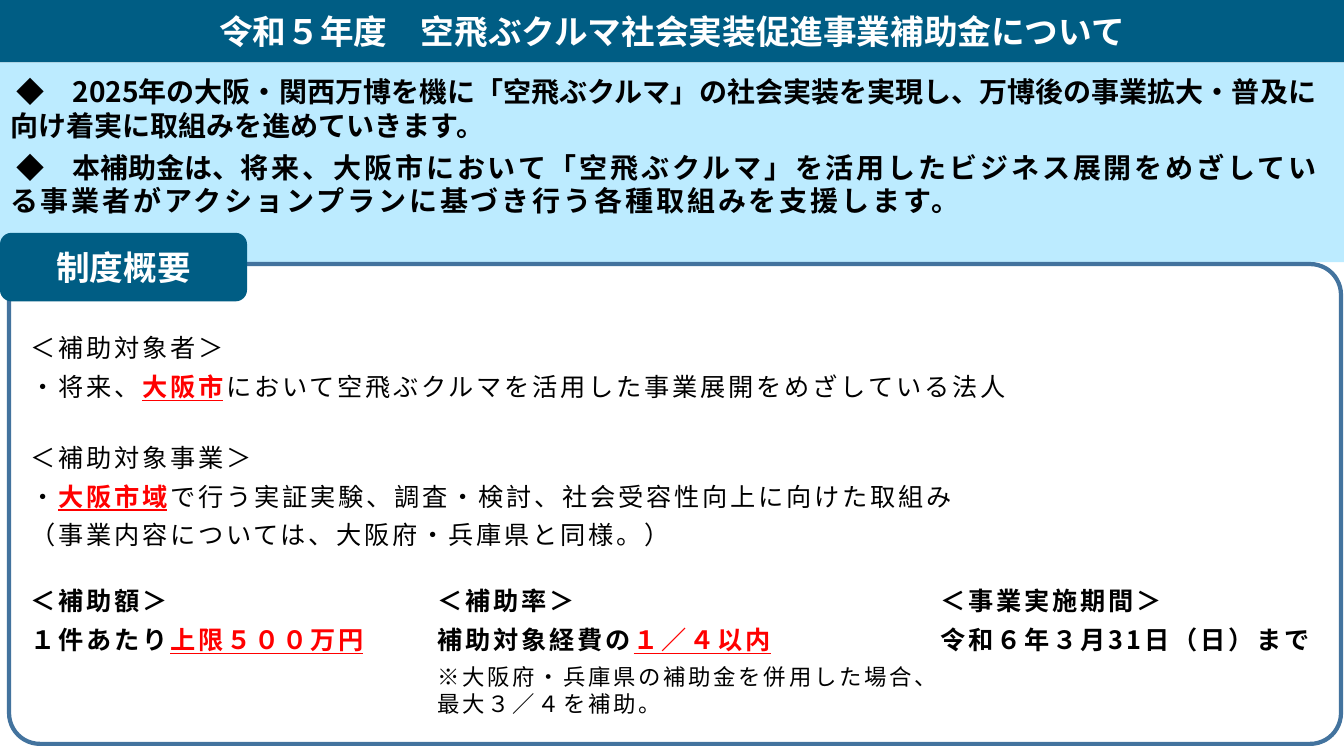
from lxml.etree import SubElement
from pptx import Presentation
from pptx.dml.color import RGBColor
from pptx.enum.shapes import MSO_SHAPE as Preset
from pptx.enum.text import MSO_ANCHOR as Anchor, MSO_AUTO_SIZE as AutoSize, PP_ALIGN as Align
from pptx.oxml.ns import qn
from pptx.util import Inches, Pt

FONT = "Noto Sans CJK JP"
NAVY = RGBColor(0x00, 0x5D, 0x84)
SKY = RGBColor(0xBC, 0xEB, 0xFF)
BORDER = RGBColor(0x43, 0x73, 0x9E)
WHITE = RGBColor(0xFF, 0xFF, 0xFF)
BLACK = RGBColor(0x00, 0x00, 0x00)
RED = RGBColor(0xFF, 0x00, 0x00)

PLAIN = dict(size=18, spacing=2)
BOLD = dict(size=18, spacing=2, bold=True)
KEY = dict(size=18, spacing=2, bold=True, color=RED, underline=True)
NOTE = dict(size=16, spacing=2)
LEAD = dict(size=20, bold=True)
LEAD_WIDE = dict(size=20, bold=True, spacing=2)
HEADING = dict(size=24, bold=True, color=WHITE)


def place(shape, left, top, width, height):
    shape.left, shape.top = Inches(left), Inches(top)
    shape.width, shape.height = Inches(width), Inches(height)


def write(shape, lines, margins=(0.1, 0.12, 0.1, 0.05), gap=3, align=Align.LEFT, anchor=Anchor.TOP):
    frame = shape.text_frame
    frame.word_wrap = True
    frame.auto_size = AutoSize.NONE
    frame.vertical_anchor = anchor
    frame.margin_left, frame.margin_top, frame.margin_right, frame.margin_bottom = map(Inches, margins)
    for index, line in enumerate(lines):
        paragraph = frame.add_paragraph() if index else frame.paragraphs[0]
        paragraph.alignment = align
        paragraph.space_before = paragraph.space_after = Pt(gap)
        for text, style in line:
            run = paragraph.add_run()
            run.text = text
            run.font.size = Pt(style["size"])
            run.font.bold = style.get("bold", False)
            run.font.underline = style.get("underline", False)
            run.font.color.rgb = style.get("color", BLACK)
            run.font.name = FONT
            properties = run.font._element
            SubElement(properties, qn("a:ea")).set("typeface", FONT)
            properties.set("spc", str(style.get("spacing", 0) * 100))


presentation = Presentation()
presentation.slide_width = Inches(13.33)
presentation.slide_height = Inches(7.5)
slide = presentation.slides.add_slide(presentation.slide_layouts[1])

title = slide.shapes.title
place(title, 0, 0, 13.33, 0.62)
title.fill.solid()
title.fill.fore_color.rgb = NAVY
write(title, [[("令和５年度　空飛ぶクルマ社会実装促進事業補助金について", HEADING)]],
      margins=(0, 0, 0, 0), gap=0, align=Align.CENTER, anchor=Anchor.MIDDLE)

lead = slide.placeholders[1]
place(lead, 0, 0.62, 13.33, 1.98)
lead.fill.solid()
lead.fill.fore_color.rgb = SKY
write(lead, [
    [(" ◆　2025年の大阪・関西万博を機に「空飛ぶクルマ」の社会実装を実現し、"
      "万博後の事業拡大・普及に向け着実に取組みを進めていきます。", LEAD)],
    [(" ◆　本補助金は、", LEAD),
     ("将来、大阪市において「空飛ぶクルマ」を活用したビジネス展開をめざしている"
      "事業者がアクションプランに基づき行う各種取組みを支援します。", LEAD_WIDE)],
])
for paragraph in lead.text_frame.paragraphs:
    properties = paragraph._p.get_or_add_pPr()
    properties.set("marL", "0")
    properties.set("indent", "0")
    SubElement(properties, qn("a:buNone"))

panel = slide.shapes.add_shape(Preset.ROUNDED_RECTANGLE, 0, 0, 0, 0)
place(panel, 0.09, 2.62, 13.21, 4.76)
panel.adjustments[0] = 0.064
panel.fill.solid()
panel.fill.fore_color.rgb = WHITE
panel.line.color.rgb = BORDER
panel.line.width = Pt(3)
panel.shadow.inherit = False

tab = slide.shapes.add_shape(Preset.ROUNDED_RECTANGLE, 0, 0, 0, 0)
place(tab, 0, 2.31, 2.45, 0.68)
tab.fill.solid()
tab.fill.fore_color.rgb = NAVY
tab.line.fill.background()
tab.shadow.inherit = False
write(tab, [[("制度概要", HEADING)]], margins=(0.04, 0.05, 0.04, 0.05), gap=0,
      align=Align.CENTER, anchor=Anchor.MIDDLE)

sections = [
    ((0.2, 3.18, 13.13, 0.9), [
        [("＜補助対象者＞", PLAIN)],
        [("・将来、", PLAIN), ("大阪市", KEY),
         ("において空飛ぶクルマを活用した事業展開をめざしている法人", PLAIN)],
    ]),
    ((0.2, 4.27, 13.13, 1.44), [
        [("＜補助対象事業＞", PLAIN)],
        [("・", PLAIN), ("大阪市域", KEY),
         ("で行う実証実験、調査・検討、社会受容性向上に向けた取組み", PLAIN)],
        [("（事業内容については、大阪府・兵庫県と同様。）", PLAIN)],
    ]),
    ((0.2, 5.69, 3.9, 0.84), [
        [("＜補助額＞", BOLD)],
        [("１件あたり", BOLD), ("上限５００万円", KEY)],
    ]),
    ((4.24, 5.69, 4.99, 1.59), [
        [("＜補助率＞", BOLD)],
        [("補助対象経費の", BOLD), ("１／４以内", KEY)],
        [("※大阪府・兵庫県の補助金を併用した場合、最大３／４を補助。", NOTE)],
    ]),
    ((9.23, 5.69, 3.9, 0.91), [
        [("＜事業実施期間＞", BOLD)],
        [("令和６年３月31日（日）まで", BOLD)],
    ]),
]
for area, lines in sections:
    section = slide.shapes.add_textbox(0, 0, 0, 0)
    place(section, *area)
    write(section, lines)

presentation.save("out.pptx")
